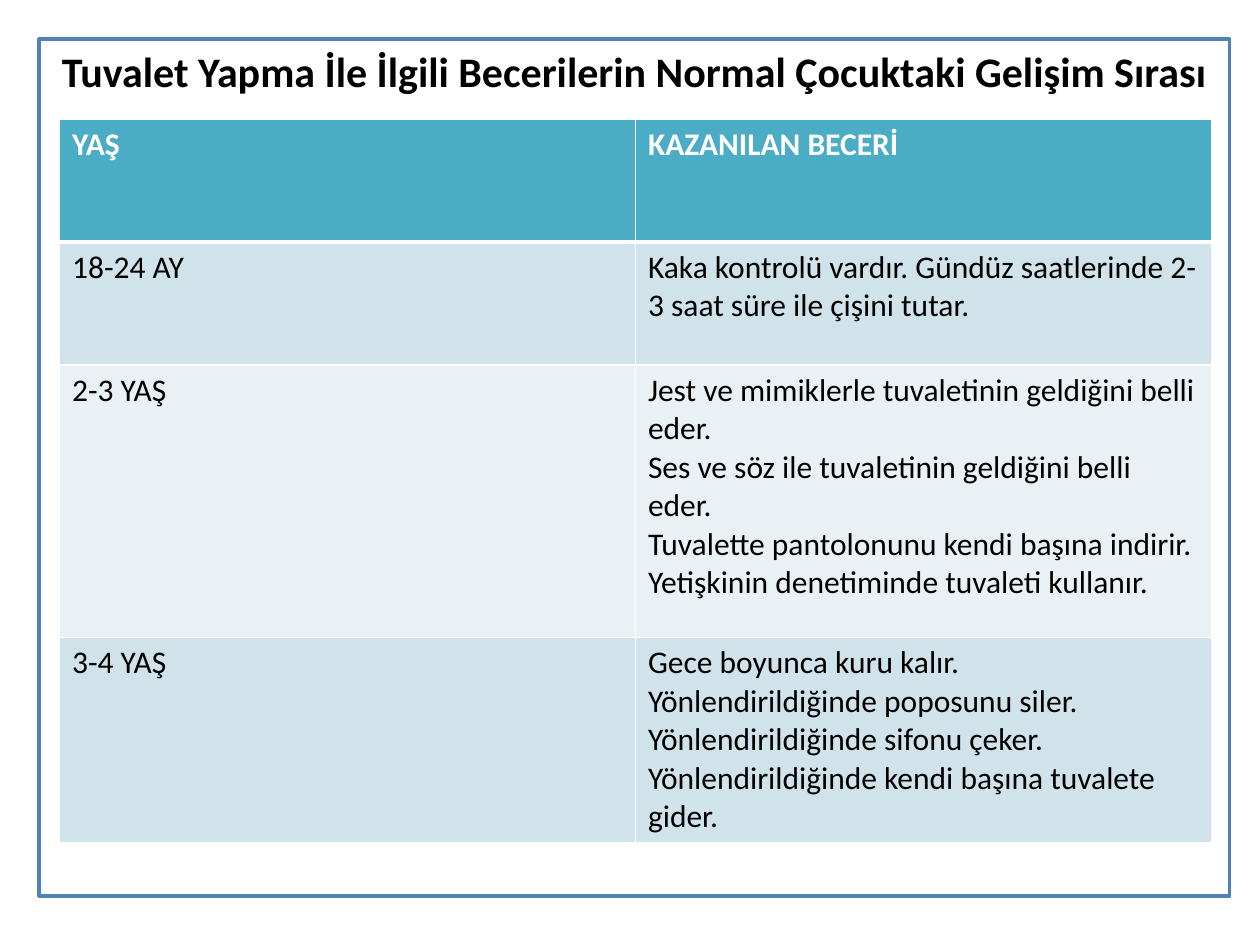
from dataclasses import dataclass

from lxml.etree import SubElement
from pptx import Presentation
from pptx.dml.color import RGBColor
from pptx.enum.shapes import MSO_SHAPE
from pptx.enum.text import MSO_ANCHOR, PP_ALIGN
from pptx.oxml.ns import qn
from pptx.util import Cm, Pt


@dataclass(frozen=True)
class Theme:
    font: str = "Calibri"
    title_size: int = 24
    cell_size: int = 18
    white: str = "FFFFFF"
    text: str = "000000"
    frame: str = "4F81BD"
    header: str = "4BACC6"
    bands: tuple = ("D0E3EA", "E9F1F5")


THEME = Theme()
TITLE = "Tuvalet Yapma İle İlgili Becerilerin Normal Çocuktaki Gelişim Sırası"
SKILLS = [
    ("YAŞ", "KAZANILAN BECERİ"),
    ("18-24 AY",
     "Kaka kontrolü vardır. Gündüz saatlerinde 2-3 saat süre ile çişini tutar."),
    ("2-3 YAŞ",
     "Jest ve mimiklerle tuvaletinin geldiğini belli eder.\n"
     "Ses ve söz ile tuvaletinin geldiğini belli eder.\n"
     "Tuvalette pantolonunu kendi başına indirir.\n"
     "Yetişkinin denetiminde tuvaleti kullanır."),
    ("3-4 YAŞ",
     "Gece boyunca kuru kalır.\n"
     "Yönlendirildiğinde poposunu siler.\n"
     "Yönlendirildiğinde sifonu çeker.\n"
     "Yönlendirildiğinde kendi başına tuvalete gider."),
]
ROW_HEIGHTS = (2.48, 2.48, 5.49, 3.5)


def set_fill(target, color):
    target.fill.solid()
    target.fill.fore_color.rgb = RGBColor.from_string(color)


def write_text(tf, text, size, color, bold):
    """Write one paragraph for each line of text."""
    tf.text = text
    font_format = {"name": THEME.font, "size": Pt(size), "bold": bold}
    for p in tf.paragraphs:
        for r in p.runs:
            for name, value in font_format.items():
                setattr(r.font, name, value)
            r.font.color.rgb = RGBColor.from_string(color)


def set_borders(cell, bottom_width):
    tc_pr = cell._tc.get_or_add_tcPr()
    widths = {"a:lnL": 1, "a:lnR": 1, "a:lnT": 1, "a:lnB": bottom_width}
    for position, (tag, width) in enumerate(widths.items()):
        ln = SubElement(tc_pr, qn(tag), w=str(Pt(width)))
        tc_pr.insert(position, ln)
        fill = SubElement(ln, qn("a:solidFill"))
        SubElement(fill, qn("a:srgbClr"), val=THEME.white)


def add_title_frame(slide):
    s = slide.shapes.add_shape(
        MSO_SHAPE.RECTANGLE, Cm(0.79), Cm(0.79), Cm(24), Cm(17.27))
    s.shadow.inherit = False
    set_fill(s, THEME.white)
    s.line.color.rgb = RGBColor.from_string(THEME.frame)
    s.line.width = Pt(2)
    tf = s.text_frame
    tf.word_wrap = True
    tf.vertical_anchor = MSO_ANCHOR.TOP
    write_text(tf, TITLE, THEME.title_size, THEME.text, True)
    p = tf.paragraphs[0]
    p.alignment = PP_ALIGN.CENTER
    p.space_before = Pt(1)


def add_skill_table(slide):
    table = slide.shapes.add_table(
        len(SKILLS), 2, Cm(1.2), Cm(2.4), Cm(23.22), Cm(sum(ROW_HEIGHTS))).table
    for i, (texts, height) in enumerate(zip(SKILLS, ROW_HEIGHTS)):
        table.rows[i].height = Cm(height)
        header = i == 0
        fill = THEME.header if header else THEME.bands[(i - 1) % 2]
        color = THEME.white if header else THEME.text
        for cell, text in zip(table.rows[i].cells, texts):
            set_fill(cell, fill)
            set_borders(cell, 3 if header else 1)
            write_text(cell.text_frame, text, THEME.cell_size, color, header)


def main():
    prs = Presentation()
    prs.slide_width, prs.slide_height = Cm(25.4), Cm(19.05)
    slide = prs.slides.add_slide(prs.slide_layouts[6])
    add_title_frame(slide)
    add_skill_table(slide)
    prs.save("out.pptx")


if __name__ == "__main__":
    main()
